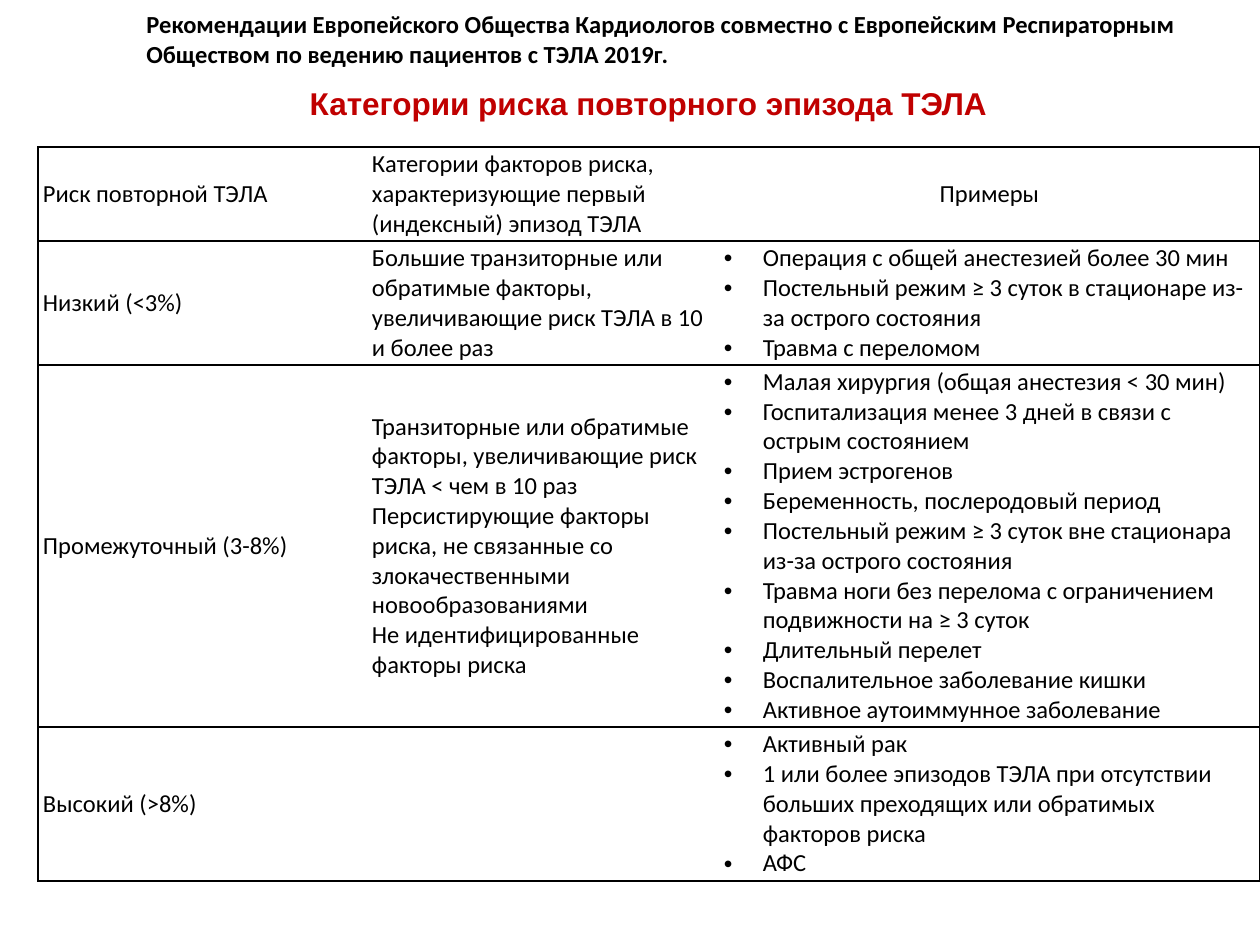
"""Builds a slide with a table of recurrent pulmonary embolism risk categories."""
from lxml.etree import SubElement
from pptx import Presentation
from pptx.dml.color import RGBColor
from pptx.enum.text import MSO_ANCHOR, PP_ALIGN
from pptx.oxml.ns import qn
from pptx.util import Pt

PX = 914400 // 126
THEME = {
    "body_font": "Calibri", "title_font": "Arial",
    "body_size": 14, "title_size": 18,
    "ink": "000000", "accent": "C00000", "paper": "FFFFFF",
}
COLS = [329, 352, 541]
ROWS = [
    (94, "Риск повторной ТЭЛА",
     ["Категории факторов риска, характеризующие первый (индексный) эпизод ТЭЛА"],
     ["Примеры"]),
    (124, "Низкий (<3%)",
     ["Большие транзиторные или обратимые факторы, увеличивающие риск ТЭЛА в 10 и более раз"],
     ["Операция с общей анестезией более 30 мин",
      "Постельный режим ≥ 3 суток в стационаре из-за острого состояния",
      "Травма с переломом"]),
    (362, "Промежуточный (3-8%)",
     ["Транзиторные или обратимые факторы, увеличивающие риск ТЭЛА < чем в 10 раз",
      "Персистирующие факторы риска, не связанные со злокачественными новообразованиями",
      "Не идентифицированные факторы риска"],
     ["Малая хирургия (общая анестезия < 30 мин)",
      "Госпитализация менее 3 дней в связи с острым состоянием",
      "Прием эстрогенов",
      "Беременность, послеродовый период",
      "Постельный режим ≥ 3 суток вне стационара из-за острого состояния",
      "Травма ноги без перелома с ограничением подвижности на ≥ 3 суток",
      "Длительный перелет",
      "Воспалительное заболевание кишки",
      "Активное аутоиммунное заболевание"]),
    (154, "Высокий (>8%)", [],
     ["Активный рак",
      "1 или более эпизодов ТЭЛА при отсутствии больших преходящих или обратимых факторов риска",
      "АФС"]),
]
HEADINGS = [
    ((134, 3, 1172, 72),
     "Рекомендации Европейского Общества Кардиологов совместно с Европейским "
     "Респираторным Обществом по ведению пациентов с ТЭЛА 2019г.",
     "body", "ink", PP_ALIGN.LEFT),
    ((108, 78, 1081, 50), "Категории риска повторного эпизода ТЭЛА",
     "title", "accent", PP_ALIGN.CENTER),
]


def style(p, kind="body", color="ink", bold=False):
    p.font.name = THEME[f"{kind}_font"]
    p.font.size = Pt(THEME[f"{kind}_size"])
    p.font.bold = bold
    p.font.color.rgb = RGBColor.from_string(THEME[color])


def set_borders(cell, visible):
    tc_pr = cell._tc.get_or_add_tcPr()
    for side in "LRTB":
        ln = SubElement(tc_pr, qn(f"a:ln{side}"), w=str(Pt(1)))
        if side in visible:
            fill = SubElement(ln, qn("a:solidFill"))
            SubElement(fill, qn("a:srgbClr"), val=THEME["ink"])
        else:
            SubElement(ln, qn("a:noFill"))


prs = Presentation()
prs.slide_width, prs.slide_height = 1260 * PX, 945 * PX
s = prs.slides.add_slide(prs.slide_layouts[6])

heights = [row[0] for row in ROWS]
frame = s.shapes.add_table(
    len(ROWS), len(COLS), 38 * PX, 147 * PX, sum(COLS) * PX, sum(heights) * PX)
table = frame.table
table.first_row = table.horz_banding = False
for column, width in zip(table.columns, COLS):
    column.width = width * PX
for row, height in zip(table.rows, heights):
    row.height = height * PX

for i, (_, risk, factors, examples) in enumerate(ROWS):
    for j, lines in enumerate([[risk], factors, examples]):
        cell = table.cell(i, j)
        set_borders(cell, ("LTB", "TB", "RTB")[j])
        cell.fill.solid()
        cell.fill.fore_color.rgb = RGBColor.from_string(THEME["paper"])
        cell.vertical_anchor = MSO_ANCHOR.MIDDLE
        cell.margin_left = cell.margin_right = 5 * PX
        cell.margin_top = cell.margin_bottom = 2 * PX
        tf = cell.text_frame
        tf.text = "\n".join(lines)
        for p in tf.paragraphs:
            style(p)
            if j == 2 and i == 0:
                p.alignment = PP_ALIGN.CENTER
            elif j == 2:
                p_pr = p._p.get_or_add_pPr()
                p_pr.set("marL", str(39 * PX))
                p_pr.set("indent", str(-39 * PX))
                bullet_font = SubElement(p_pr, qn("a:buFont"), typeface="Arial")
                SubElement(p_pr, qn("a:buChar"), char="•")
                p_pr.remove(bullet_font)
                p_pr.insert(0, bullet_font)
                p_pr.append(p_pr.find(qn("a:defRPr")))

for box, text, kind, color, align in HEADINGS:
    tf = s.shapes.add_textbox(*(v * PX for v in box)).text_frame
    tf.word_wrap = True
    tf.text = text
    p = tf.paragraphs[0]
    p.alignment = align
    style(p, kind, color, bold=True)

for sp in s.shapes:
    frames = [sp.text_frame] if sp.has_text_frame else [c.text_frame for c in sp.table.iter_cells()]
    for p in (p for tf in frames for p in tf.paragraphs):
        for r in p.runs:
            r.font.size, r.font.name, r.font.bold = p.font.size, p.font.name, p.font.bold
            r.font.color.rgb = p.font.color.rgb

prs.save("out.pptx")
